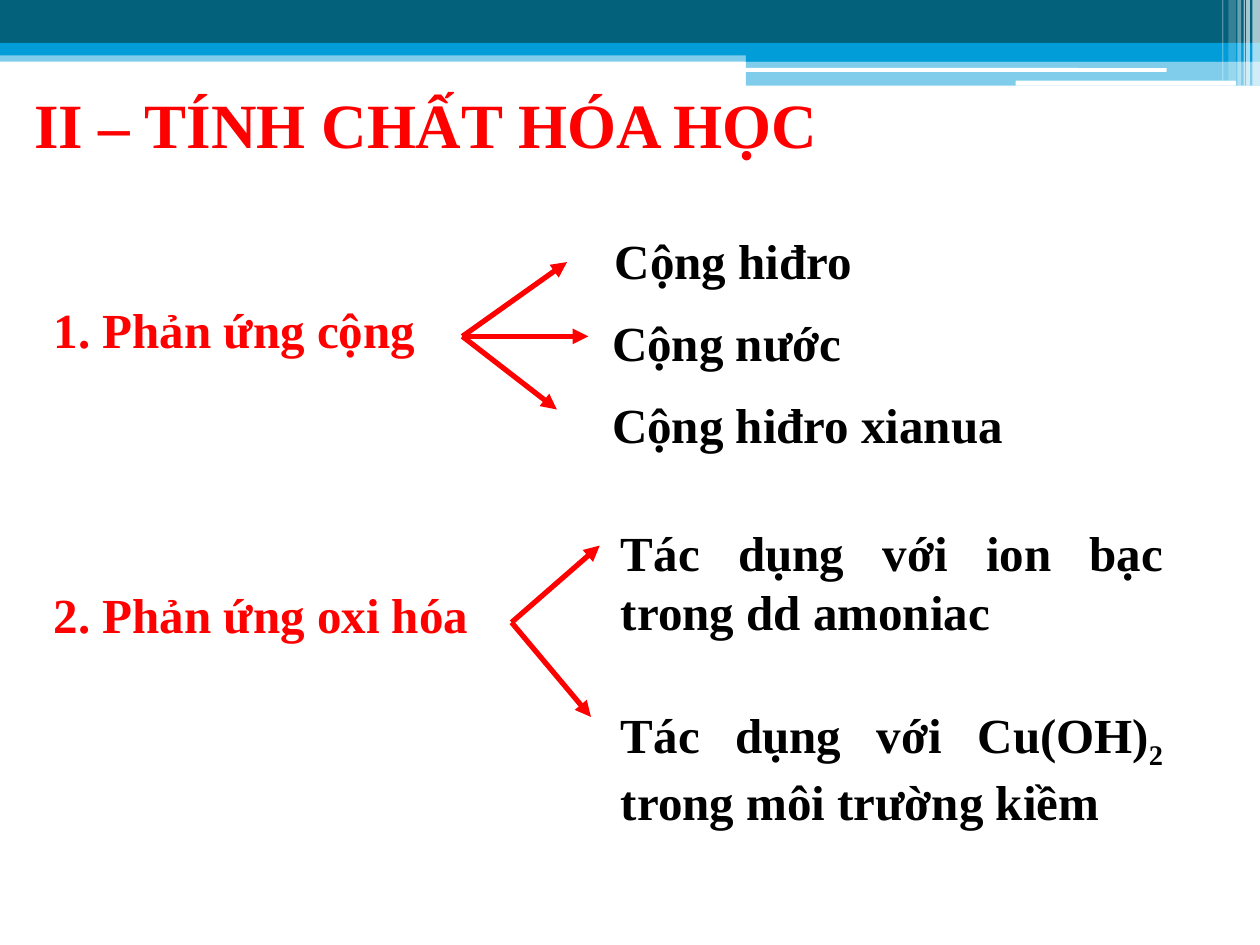
import pptx
import pptx.util
import pptx.dml.color
import pptx.enum.shapes
import pptx.enum.text
import pptx.oxml.ns
from lxml import etree

Inches = pptx.util.Inches
SHAPES = pptx.enum.shapes.MSO_SHAPE
ALIGN = pptx.enum.text.PP_ALIGN

FONT = "Times New Roman"
COLORS = {"red": "FF0000", "black": "000000", "teal": "04617B",
          "blue": "009DD9", "white": "FFFFFF"}

TITLE = "II – TÍNH CHẤT HÓA HỌC"

# Header bands: left, top, width, height, colour, opacity in percent
BANDS = [
    (0, 0.4, 10, 0.09, "blue", 50),
    (0, 0, 10, 0.34, "teal", 100),
    (0, 0.34, 10, 0.1, "blue", 100),
    (5.92, 0.39, 4.08, 0.1, "blue", 100),
    (5.92, 0.48, 4.08, 0.2, "blue", 50),
]
# White rounded strips: left, top, width, height
STRIPS = [(5.91, 0.54, 3.35, 0.03), (8.06, 0.64, 1.75, 0.04)]
# Translucent stripes at the right edge: left, width, height, opacity
STRIPES = [
    (9.94, 0.06, 0.68, 65), (9.89, 0.03, 0.68, 65), (9.87, 0.01, 0.68, 60),
    (9.82, 0.03, 0.68, 40), (9.75, 0.06, 0.64, 20), (9.7, 0.01, 0.64, 30),
]

# Each reaction: heading, its top, arrow start, arrow ends, and the branches
# as (left, top, width, height, alignment, [(text, is subscript), ...])
REACTIONS = [
    {"heading": "1. Phản ứng cộng", "top": 2.33, "start": (3.67, 2.67),
     "ends": [(4.5, 2.08), (4.67, 2.67), (4.42, 3.25)],
     "branches": [
         (4.78, 1.78, 3.58, 0.57, ALIGN.LEFT, [("Cộng hiđro", False)]),
         (4.76, 2.43, 3.58, 0.57, ALIGN.LEFT, [("Cộng nước", False)]),
         (4.76, 3.08, 3.58, 0.57, ALIGN.LEFT, [("Cộng hiđro xianua", False)])]},
    {"heading": "2. Phản ứng oxi hóa", "top": 4.59, "start": (4.06, 4.94),
     "ends": [(4.76, 4.33), (4.69, 5.69)],
     "branches": [
         (4.83, 4.1, 4.5, 1.04, ALIGN.JUSTIFY,
          [("Tác dụng với ion bạc trong dd amoniac", False)]),
         (4.83, 5.54, 4.5, 1.04, ALIGN.JUSTIFY,
          [("Tác dụng với Cu(OH)", False), ("2", True),
           (" trong môi trường kiềm", False)])]},
]


def rgb(name):
    return pptx.dml.color.RGBColor.from_string(COLORS[name])


def add_child(parent, tag, **attributes):
    return etree.SubElement(parent, pptx.oxml.ns.qn(tag), attributes)


def add_band(slide, place, color, opacity=100, kind=SHAPES.RECTANGLE):
    band = slide.shapes.add_shape(kind, *map(Inches, place))
    band.shadow.inherit = False
    band.line.fill.background()
    band.fill.solid()
    band.fill.fore_color.rgb = rgb(color)
    if opacity < 100:
        fill = band.fill.fore_color._xFill
        add_child(fill[0], "a:alpha", val=str(opacity * 1000))


def write(box, spans, size, color, align=ALIGN.LEFT):
    frame = box.text_frame
    frame.word_wrap = True
    frame.auto_size = pptx.enum.text.MSO_AUTO_SIZE.NONE
    frame.vertical_anchor = pptx.enum.text.MSO_ANCHOR.TOP
    para = frame.paragraphs[0]
    para.alignment = align
    for text, subscript in spans:
        span = para.add_run()
        span.text = text
        span.font.name = FONT
        span.font.size = pptx.util.Pt(size)
        span.font.bold = True
        span.font.color.rgb = rgb(color)
        if subscript:
            span.font._element.set("baseline", "-25000")


def add_text(slide, place, spans, color, align=ALIGN.LEFT):
    box = slide.shapes.add_textbox(*map(Inches, place))
    write(box, spans, 28, color, align)


def add_arrow(group, start, end):
    arrow = group.shapes.add_connector(
        pptx.enum.shapes.MSO_CONNECTOR.STRAIGHT, *map(Inches, start + end))
    arrow.line.color.rgb = rgb("red")
    arrow.line.width = pptx.util.Pt(3)
    add_child(arrow.line._get_or_add_ln(), "a:tailEnd", type="triangle")
    add_child(arrow._element.spPr, "a:effectLst")


def main():
    deck = pptx.Presentation()
    deck.slide_width, deck.slide_height = Inches(10), Inches(7.5)
    slide = deck.slides.add_slide(deck.slide_layouts.get_by_name("Title Only"))

    # Header decoration
    for *place, color, opacity in BANDS:
        add_band(slide, place, color, opacity)
    for place in STRIPS:
        add_band(slide, place, "white", kind=SHAPES.ROUNDED_RECTANGLE)
    for left, width, height, opacity in STRIPES:
        add_band(slide, (left, 0, width, height), "white", opacity)

    # Title
    title = slide.shapes.title
    title.left, title.top, title.width, title.height = map(
        Inches, (0.17, 0.63, 8.25, 0.71))
    write(title, [(TITLE, False)], 36, "red")

    # Reactions with their branches
    for reaction in REACTIONS:
        add_text(slide, (0.33, reaction["top"], 3.5, 0.57),
                 [(reaction["heading"], False)], "red")
        arrows = slide.shapes.add_group_shape()
        for end in reaction["ends"]:
            add_arrow(arrows, reaction["start"], end)
        for *place, align, spans in reaction["branches"]:
            add_text(slide, place, spans, "black", align)

    deck.save("out.pptx")


if __name__ == "__main__":
    main()
